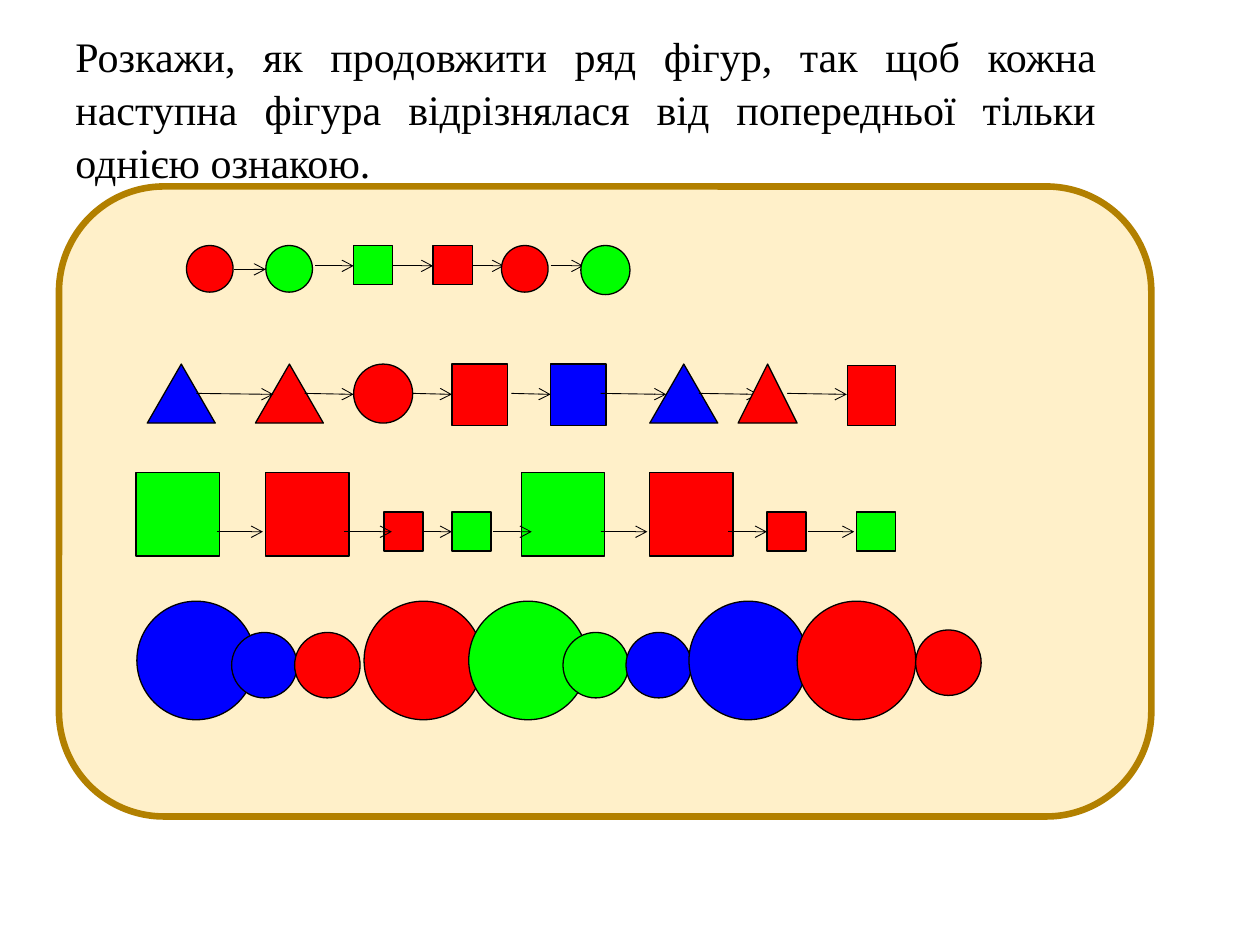
from lxml import etree
from pptx import Presentation
from pptx.dml.color import RGBColor
from pptx.enum.shapes import MSO_CONNECTOR, MSO_SHAPE
from pptx.enum.text import MSO_ANCHOR, MSO_AUTO_SIZE, PP_ALIGN
from pptx.oxml.ns import qn
from pptx.util import Cm, Pt

RECT, OVAL = MSO_SHAPE.RECTANGLE, MSO_SHAPE.OVAL
TRIANGLE, ROUNDED = MSO_SHAPE.ISOSCELES_TRIANGLE, MSO_SHAPE.ROUNDED_RECTANGLE
STRAIGHT = MSO_CONNECTOR.STRAIGHT
JUSTIFY, MIDDLE, NO_FIT = PP_ALIGN.JUSTIFY, MSO_ANCHOR.MIDDLE, MSO_AUTO_SIZE.NONE

BLACK = RGBColor(0x00, 0x00, 0x00)
RED = RGBColor(0xFF, 0x00, 0x00)
GREEN = RGBColor(0x00, 0xFF, 0x00)
BLUE = RGBColor(0x00, 0x00, 0xFF)
CREAM = RGBColor(0xFF, 0xF0, 0xC9)
OCHRE = RGBColor(0xB2, 0x80, 0x00)

TASK = ("Розкажи, як продовжити ряд фігур, так щоб кожна наступна фігура "
        "відрізнялася від попередньої тільки однією ознакою.")

# Figure kinds: preset, width, height (cm), rotation
DOT = (OVAL, 0.94, 0.94, 0)
WIDE_DOT = (OVAL, 0.99, 0.99, 0)
DISC = (OVAL, 1.19, 1.19, 0)
BALL = (OVAL, 1.32, 1.32, 0)
BIG_BALL = (OVAL, 2.39, 2.39, 0)
TILE = (RECT, 0.79, 0.79, 0)
BIG_TILE = (RECT, 1.68, 1.68, 0)
BLOCK = (RECT, 1.12, 1.24, 0)
TURNED_BLOCK = (RECT, 1.22, 0.97, 90)
TENT = (TRIANGLE, 1.37, 1.19, 0)
SLIM_TENT = (TRIANGLE, 1.19, 1.19, 0)

# Each row: top in the panel, figures (kind, colour, x, y in the row),
# arrows (x1, x2, y1, y2) and the figures that lie over the arrows
ROWS = [
    (1.19,
     [(DOT, RED, 2.57, 0), (DOT, GREEN, 4.17, 0),
      (TILE, GREEN, 5.94, 0), (TILE, RED, 7.54, 0)],
     [(3.53, 4.17, 0.48, 0.48)] + [(a, b, 0.41, 0.41) for a, b in (
         (5.16, 5.94), (6.73, 7.54), (8.33, 8.97), (9.91, 10.57))],
     [(DOT, RED, 8.92, 0), (WIDE_DOT, GREEN, 10.52, 0)]),
    (3.58,
     [(TENT, BLUE, 1.78, 0), (TENT, RED, 3.96, 0), (DISC, RED, 5.94, 0),
      (BLOCK, RED, 7.92, 0), (BLOCK, BLUE, 9.91, 0), (TENT, BLUE, 11.91, 0)],
     [(a, b, 0.59, 0.61) for a, b in (
         (2.77, 4.32), (4.95, 5.94), (7.14, 7.92), (9.12, 9.91),
         (10.92, 12.24), (12.9, 14.1), (14.68, 15.88))],
     [(SLIM_TENT, RED, 13.69, 0), (TURNED_BLOCK, RED, 15.77, 0.15)]),
    (5.77,
     [(BIG_TILE, GREEN, 1.55, 0), (BIG_TILE, RED, 4.17, 0),
      (TILE, RED, 6.55, 0.79), (TILE, GREEN, 7.92, 0.79),
      (BIG_TILE, GREEN, 9.32, 0), (BIG_TILE, RED, 11.91, 0),
      (TILE, RED, 14.27, 0.79), (TILE, GREEN, 16.08, 0.79)],
     [(a, b, 1.19, 1.19) for a, b in (
         (3.18, 4.11), (5.74, 6.71), (7.34, 7.92), (8.74, 9.53),
         (10.92, 11.86), (13.49, 14.27), (15.09, 16.03))],
     []),
    (8.36,
     [(BIG_BALL, BLUE, 1.57, 0), (BALL, BLUE, 3.48, 0.63),
      (BALL, RED, 4.75, 0.63), (BIG_BALL, RED, 6.15, 0),
      (BIG_BALL, GREEN, 8.26, 0), (BALL, GREEN, 10.16, 0.63),
      (BALL, BLUE, 11.43, 0.63), (BIG_BALL, BLUE, 12.7, 0),
      (BIG_BALL, RED, 14.88, 0), (BALL, RED, 17.27, 0.58)],
     [], []),
]


def add_figure(s, preset, box, fill, line, weight):
    sp = s.shapes.add_shape(preset, *(Cm(v) for v in box))
    sp.shadow.inherit = False
    sp.fill.solid()
    sp.fill.fore_color.rgb = fill
    sp.line.color.rgb = line
    sp.line.width = Pt(weight)
    return sp


def add_arrow(s, x1, y1, x2, y2):
    cxn = s.shapes.add_connector(STRAIGHT, Cm(x1), Cm(y1), Cm(x2), Cm(y2))
    cxn.line.color.rgb = BLACK
    cxn.line.width = Pt(0.5)
    etree.SubElement(cxn.line._get_or_add_ln(), qn("a:tailEnd"), type="arrow")
    etree.SubElement(cxn._element.spPr, qn("a:effectLst"))


def add_title(s, left, top, width, height):
    title = s.shapes.title
    title.left, title.top = Cm(left), Cm(top)
    title.width, title.height = Cm(width), Cm(height)
    tf = title.text_frame
    tf.word_wrap = True
    tf.auto_size = NO_FIT
    tf.vertical_anchor = MIDDLE
    tf.margin_left = Cm(0.25)
    tf.margin_right = tf.margin_top = tf.margin_bottom = Cm(0.13)
    p = tf.paragraphs[0]
    p.alignment = JUSTIFY
    p.line_spacing = 1.05
    r = p.add_run()
    r.text = TASK
    r.font.name = "Times New Roman"
    r.font.size = Pt(24)
    r.font.color.rgb = BLACK


def add_row(s, left, top, figures, arrows, front_figures):
    def place(items):
        for (preset, width, height, rotation), colour, x, y in items:
            box = (left + x, top + y, width, height)
            add_figure(s, preset, box, colour, BLACK, 0.75).rotation = rotation

    place(figures)
    for x1, x2, y1, y2 in arrows:
        add_arrow(s, left + x1, top + y1, left + x2, top + y2)
    place(front_figures)


def add_panel(s, left, top, width, height):
    add_figure(s, ROUNDED, (left, top, width, height), CREAM, OCHRE, 3.78)
    for row_top, *parts in ROWS:
        add_row(s, left, top + row_top, *parts)


def main():
    prs = Presentation()
    prs.slide_width, prs.slide_height = Cm(25.4), Cm(19.05)
    s = prs.slides.add_slide(prs.slide_layouts[5])
    # Task wording
    add_title(s, 1.27, 0.76, 20.96, 2.82)
    # Panel with the four rows of figures
    add_panel(s, 1.19, 3.76, 22.02, 12.7)
    prs.save("out.pptx")


if __name__ == "__main__":
    main()
